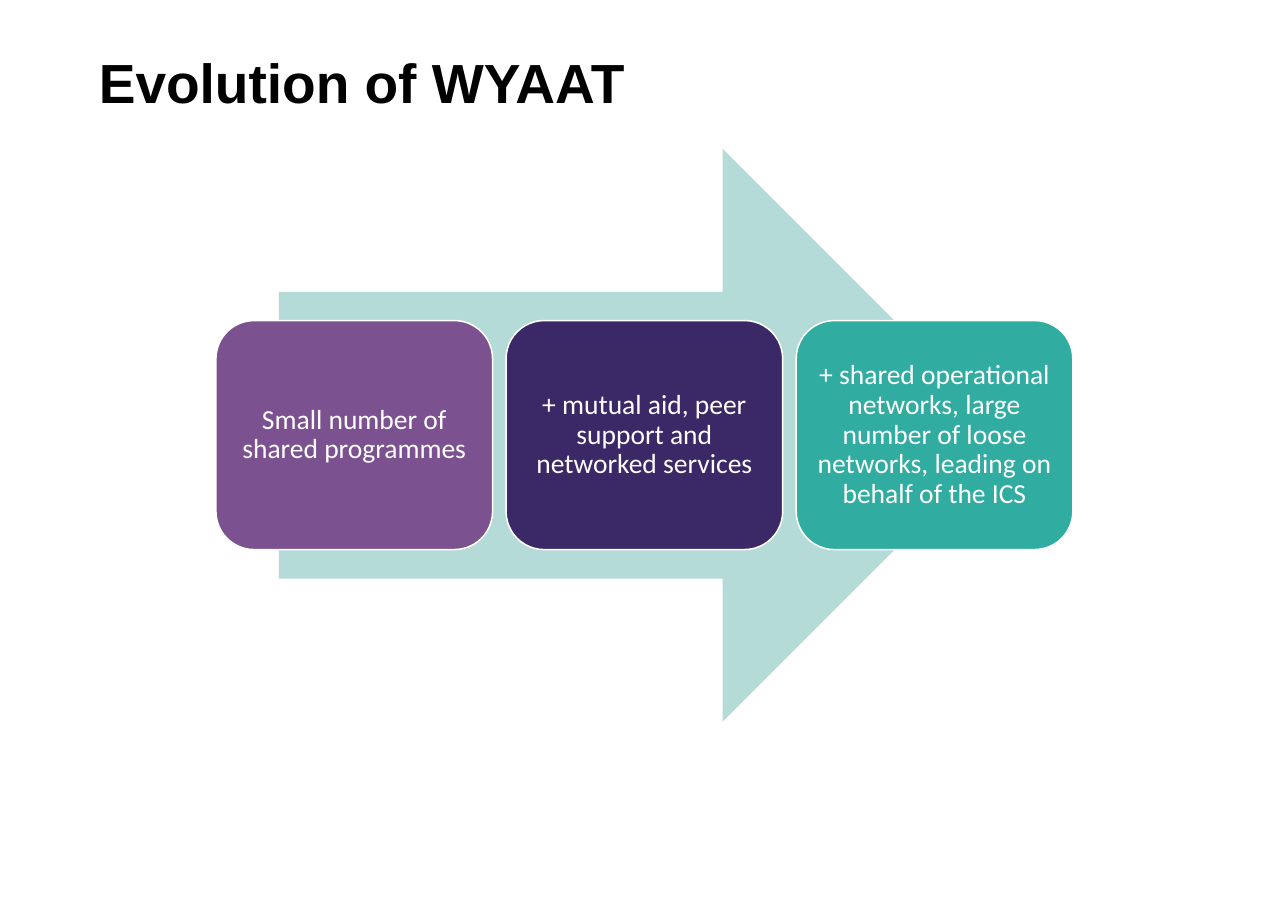
from dataclasses import dataclass

from pptx import Presentation
from pptx.dml.color import RGBColor
from pptx.enum.shapes import MSO_SHAPE
from pptx.enum.text import MSO_ANCHOR, PP_ALIGN
from pptx.util import Cm, Pt

RIGHT_ARROW = MSO_SHAPE.RIGHT_ARROW
ROUNDED = MSO_SHAPE.ROUNDED_RECTANGLE
MIDDLE = MSO_ANCHOR.MIDDLE
LEFT, CENTER = PP_ALIGN.LEFT, PP_ALIGN.CENTER


@dataclass(frozen=True)
class Theme:
    title_font: str = "Arial"
    stage_font: str = "Calibri"
    title_size: int = 36
    stage_size: int = 18
    black: str = "000000"
    white: str = "FFFFFF"
    pale_teal: str = "B4DBD7"
    purple: str = "7C518F"
    indigo: str = "3B2866"
    teal: str = "31ACA1"


class SlideBuilder:
    def __init__(self, slide, theme):
        self.slide = slide
        self.theme = theme

    def add_text(self, frame, text, font, size, color, align, bold=False):
        frame.word_wrap = True
        frame.vertical_anchor = MIDDLE
        paragraph = frame.paragraphs[0]
        paragraph.alignment = align
        paragraph.line_spacing = 0.9
        run = paragraph.add_run()
        run.text = text
        run.font.name = font
        run.font.size = Pt(size)
        run.font.bold = bold
        run.font.color.rgb = RGBColor.from_string(color)

    def title(self, text, left, top, width, height):
        box = self.slide.shapes.add_textbox(Cm(left), Cm(top), Cm(width), Cm(height))
        theme = self.theme
        self.add_text(box.text_frame, text, theme.title_font, theme.title_size,
                      theme.black, LEFT, bold=True)

    def shape(self, preset, fill, left, top, width, height):
        shape = self.slide.shapes.add_shape(
            preset, Cm(left), Cm(top), Cm(width), Cm(height))
        shape.shadow.inherit = False
        shape.fill.solid()
        shape.fill.fore_color.rgb = RGBColor.from_string(fill)
        shape.line.fill.background()
        return shape

    def stage(self, text, fill, left, top, width, height):
        card = self.shape(ROUNDED, fill, left, top, width, height)
        theme = self.theme
        card.line.color.rgb = RGBColor.from_string(theme.white)
        card.line.width = Pt(1)
        frame = card.text_frame
        frame.margin_left = frame.margin_right = Cm(0.18)
        frame.margin_top = frame.margin_bottom = Cm(0.18)
        self.add_text(frame, text, theme.stage_font, theme.stage_size,
                      theme.white, CENTER)


def main():
    deck = Presentation()
    deck.slide_width, deck.slide_height = Cm(29.7), Cm(21)
    theme = Theme()
    builder = SlideBuilder(deck.slides.add_slide(deck.slide_layouts[6]), theme)

    # Heading
    builder.title("Evolution of WYAAT", 2.03, 1.12, 25.6, 1.7)

    # Direction of travel
    builder.shape(RIGHT_ARROW, theme.pale_teal, 6.43, 3.43, 16.84, 13.21)

    # Stages, evenly spaced along the arrow
    stages = [
        ("Small number of shared programmes", theme.purple),
        ("+ mutual aid, peer support and networked services", theme.indigo),
        ("+ shared operational networks, large number of loose networks, "
         "leading on behalf of the ICS", theme.teal),
    ]
    first_left, pitch = 4.98, 6.69
    for index, (text, fill) in enumerate(stages):
        builder.stage(text, fill, first_left + index * pitch, 7.39, 6.38, 5.28)

    deck.save("out.pptx")


if __name__ == "__main__":
    main()
